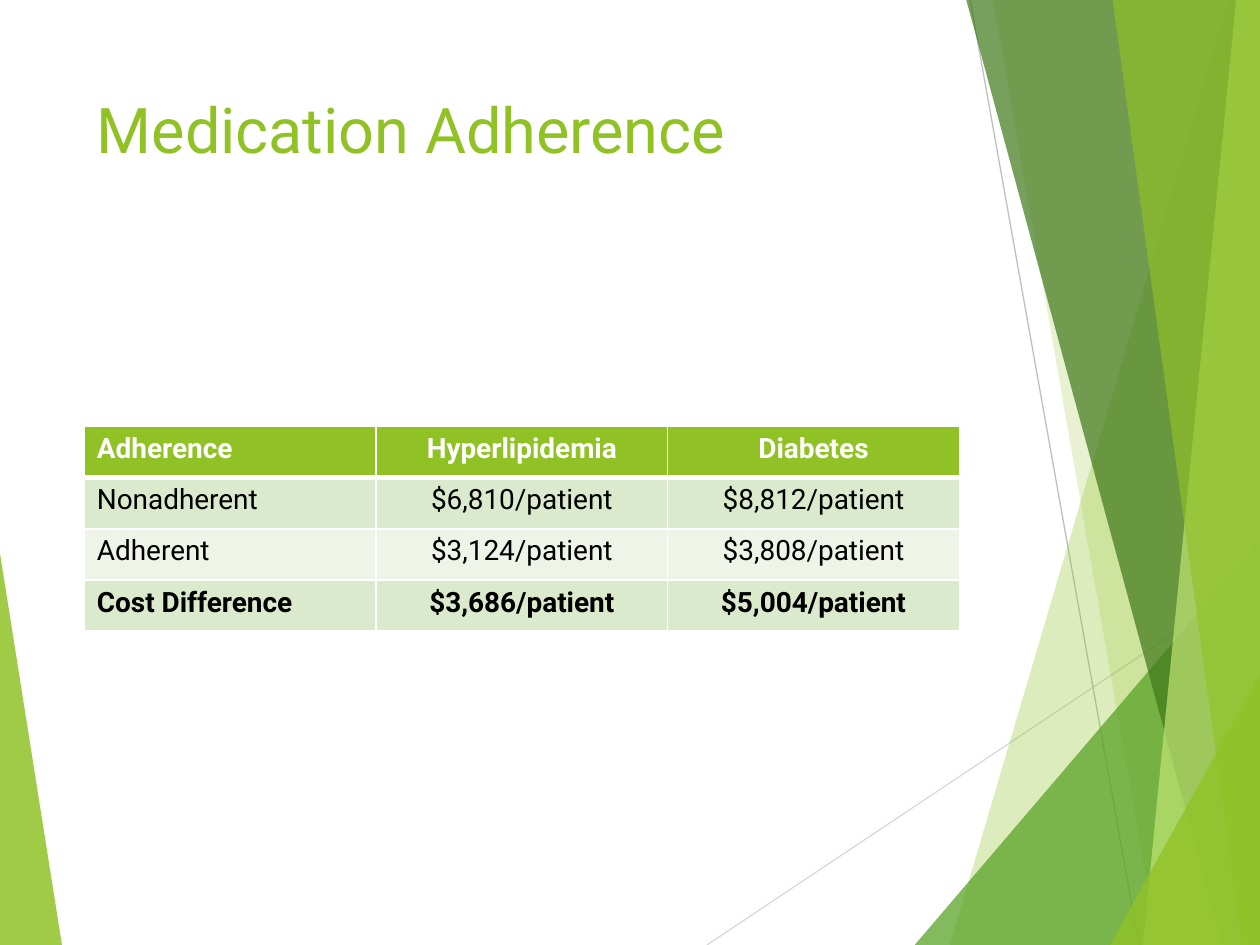
from lxml.etree import SubElement
from pptx import Presentation
from pptx.dml.color import RGBColor
from pptx.enum.shapes import MSO_CONNECTOR
from pptx.enum.text import MSO_ANCHOR, PP_ALIGN
from pptx.oxml import parse_xml
from pptx.oxml.ns import nsdecls, qn
from pptx.util import Cm, Pt

WIDE, HIGH = 25.4, 19.05
FONT = "Roboto"
HUES = {
    "lime": "90C226", "green": "54A021", "dark": "3F7819", "pale": "C0E474",
    "band": "DBE9CD", "light": "EEF4E8", "white": "FFFFFF", "black": "000000",
    "gray": "BFBFBF", "mist": "D9D9D9",
}
ROWS = [
    ("Adherence", "Hyperlipidemia", "Diabetes"),
    ("Nonadherent", "$6,810/patient", "$8,812/patient"),
    ("Adherent", "$3,124/patient", "$3,808/patient"),
    ("Cost Difference", "$3,686/patient", "$5,004/patient"),
]
LOOKS = [
    ("lime", "white", True), ("band", "black", False),
    ("light", "black", False), ("band", "black", True),
]
LINES = [("mist", 0, 19.05, 11.15, 11.61), ("gray", 5.31, 0, 8.71, 19.05)]
FACETS = [
    ("lime", 30, 10.52, 0, 4.9),
    ("lime", 20, 5.77, 0, 9.09),
    ("green", 72, 11.15, 10.9, 4.19),
    ("dark", 70, 5.23, 0, 10.39),
    ("pale", 70, 10.67, 0, 8.79),
    ("lime", 65, 8.18, 0, 10.79),
    ("lime", 80, 11.15, 13.59, 8.13),
]


def tint(name):
    return RGBColor.from_string(HUES[name])


def add_run(para, text, size, hue, bold=False):
    run = para.add_run()
    run.text = text
    font = run.font
    font.name, font.size, font.bold = FONT, Pt(size), bold
    font.color.rgb = tint(hue)


def add_facet(slide, points, hue, alpha):
    spots = [(Cm(x), Cm(y)) for x, y in points]
    pen = slide.shapes.build_freeform(*spots[0])
    pen.add_line_segments(spots[1:], close=True)
    shape = pen.convert_to_shape()
    shape.shadow.inherit = False
    shape.fill.solid()
    shape.fill.fore_color.rgb = tint(hue)
    shape.line.fill.background()
    color = shape.fill._xPr.find(qn("a:solidFill"))[0]
    SubElement(color, qn("a:alpha"), val=str(alpha * 1000))


def add_line(slide, hue, x1, y1, x2, y2):
    line = slide.shapes.add_connector(
        MSO_CONNECTOR.STRAIGHT, Cm(x1), Cm(y1), Cm(x2), Cm(y2))
    line.line.color.rgb = tint(hue)
    line.line.width = Pt(0.75)
    SubElement(line._element.spPr, qn("a:effectLst"))


def draw_left(slide, x, y, wide, high):
    points = [(x, y), (x + wide, y + high), (x, y + high)]
    add_facet(slide, points, "lime", 85)


def draw_right(slide, x, y, wide, high):
    for hue, x1, y1, x2, y2 in LINES:
        add_line(slide, hue, x + x1, y + y1, x + x2, y + y2)
    for hue, alpha, head, top, foot in FACETS:
        points = [(x + head, y + top), (x + foot, y + high), (x + wide, y + high)]
        if head < wide:
            points.append((x + wide, y + top))
        add_facet(slide, points, hue, alpha)


def draw_title(slide, x, y, wide, high):
    box = slide.shapes.add_textbox(Cm(x), Cm(y), Cm(wide), Cm(high))
    frame = box.text_frame
    frame.word_wrap = True
    frame.vertical_anchor = MSO_ANCHOR.TOP
    add_run(frame.paragraphs[0], "Medication Adherence", 36, "lime")


def add_edges(cell, base):
    props = cell._tc.get_or_add_tcPr()
    for spot, side in enumerate("LRTB"):
        width = Pt(base if side == "B" else 1)
        props.insert(spot, parse_xml(
            f'<a:ln{side} {nsdecls("a")} w="{width}"><a:solidFill>'
            f'<a:srgbClr val="{HUES["white"]}"/></a:solidFill></a:ln{side}>'))


def draw_table(slide, x, y, wide, high):
    table = slide.shapes.add_table(
        len(ROWS), len(ROWS[0]), Cm(x), Cm(y), Cm(wide), Cm(high)).table
    for col in table.columns:
        col.width = Cm(wide / len(ROWS[0]))
    for i, (words, look) in enumerate(zip(ROWS, LOOKS)):
        table.rows[i].height = Cm(high / len(ROWS))
        fill, ink, bold = look
        for j, word in enumerate(words):
            cell = table.cell(i, j)
            cell.fill.solid()
            cell.fill.fore_color.rgb = tint(fill)
            add_edges(cell, 3 if i == 0 else 1)
            para = cell.text_frame.paragraphs[0]
            para.alignment = PP_ALIGN.CENTER if j else PP_ALIGN.LEFT
            add_run(para, word, 16, ink, bold)


def main():
    deck = Presentation()
    deck.slide_width, deck.slide_height = Cm(WIDE), Cm(HIGH)
    slide = deck.slides.add_slide(deck.slide_layouts[6])
    draw_left(slide, 0, 11.15, 1.25, 7.9)
    draw_right(slide, 14.25, 0, 11.15, HIGH)
    draw_title(slide, 1.7, 1.7, 17.64, 3.66)
    draw_table(slide, 1.7, 8.6, 17.64, 4.12)
    deck.save("out.pptx")


if __name__ == "__main__":
    main()
